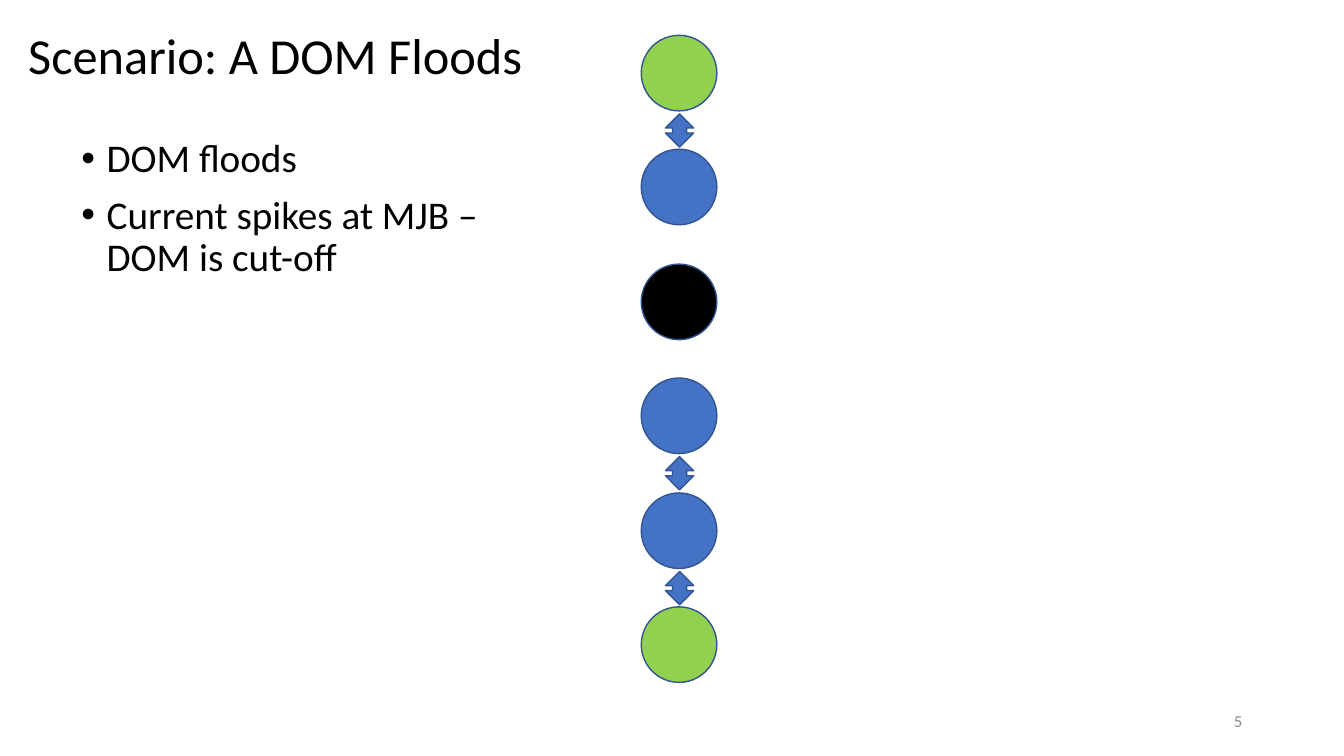
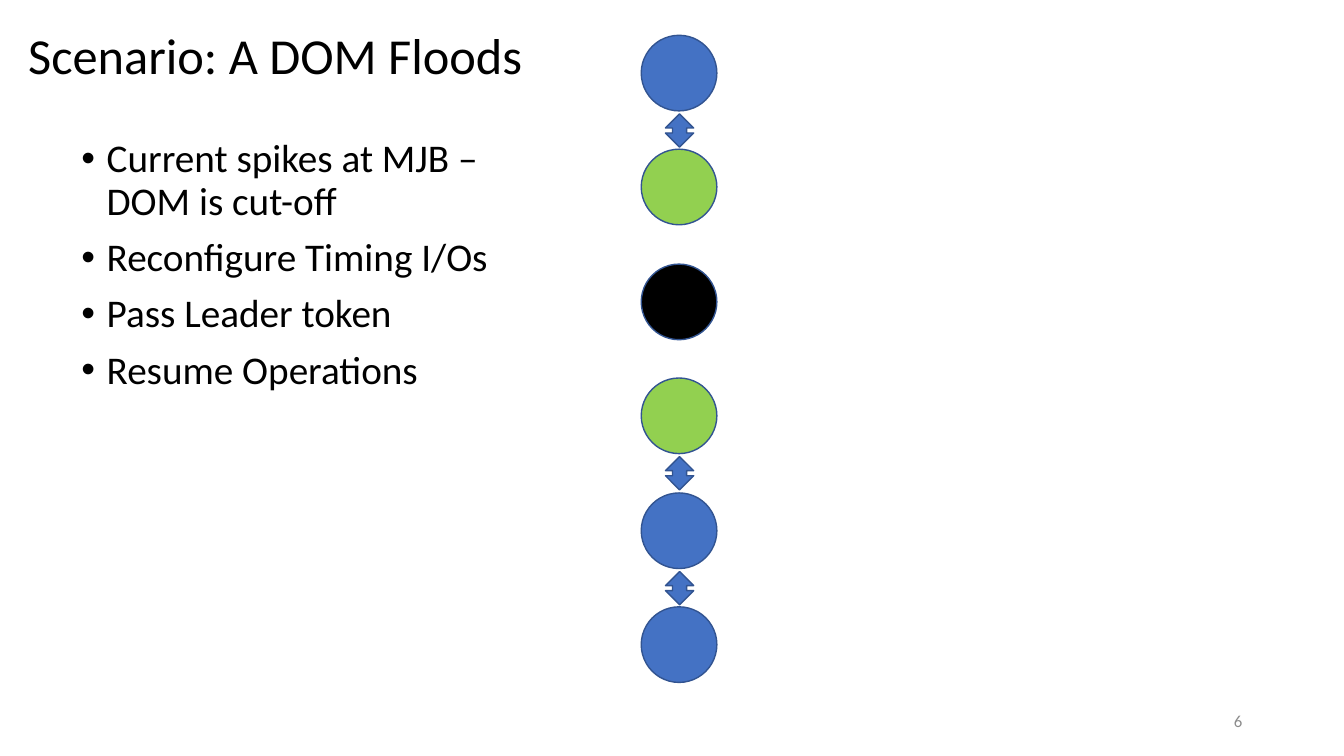
from dataclasses import dataclass
from enum import Enum

from lxml import etree
from pptx import Presentation
from pptx import util as u
from pptx.dml.color import RGBColor
from pptx.enum import shapes, text
from pptx.oxml.ns import qn

EMU_PER_PX = 9144  # 100 px to the inch


def px(length: int) -> u.Emu:
    return u.Emu(length * EMU_PER_PX)


@dataclass(frozen=True)
class Theme:
    font: str = "Calibri"
    ink: str = "000000"
    muted: str = "8C8C8C"
    module: str = "4472C4"
    leader: str = "92D050"
    flooded: str = "000000"
    outline: str = "325491"
    title_size: int = 36
    body_size: int = 28
    number_size: int = 12


THEME = Theme()


class Dom(Enum):
    """State of one module on the string."""
    NORMAL = "normal"
    LEADER = "leader"
    FLOODED = "flooded"


DOM_FILL = {
    Dom.NORMAL: THEME.module,
    Dom.LEADER: THEME.leader,
    Dom.FLOODED: THEME.flooded,
}


@dataclass(frozen=True)
class Box:
    left: int
    top: int
    width: int
    height: int

    def emu(self) -> tuple[u.Emu, u.Emu, u.Emu, u.Emu]:
        return px(self.left), px(self.top), px(self.width), px(self.height)


@dataclass(frozen=True)
class Scenario:
    number: int
    steps: tuple[str, ...]
    doms: tuple[Dom, ...]


TITLE = "Scenario: A DOM Floods"
TITLE_BOX = Box(18, 6, 860, 104)
STEPS_BOX = Box(71, 133, 498, 543)
NUMBER_BOX = Box(942, 695, 300, 40)

DOM_LEFT, DOM_SIZE = 636, 75
FIRST_DOM_TOP, LAST_DOM_TOP = 35, 602
LINK_WIDTH, LINK_HEIGHT = 28, 33
LINK_GAP = 3

SCENARIOS = (
    Scenario(
        5,
        ("DOM floods", "Current spikes at MJB – DOM is cut-off"),
        (Dom.LEADER, Dom.NORMAL, Dom.FLOODED,
         Dom.NORMAL, Dom.NORMAL, Dom.LEADER),
    ),
    Scenario(
        6,
        ("Current spikes at MJB – DOM is cut-off", "Reconfigure Timing I/Os",
         "Pass Leader token", "Resume Operations"),
        (Dom.NORMAL, Dom.LEADER, Dom.FLOODED,
         Dom.LEADER, Dom.NORMAL, Dom.NORMAL),
    ),
)


def set_font(paragraph, size: int, color: str) -> None:
    paragraph.font.name = THEME.font
    paragraph.font.size = u.Pt(size)
    paragraph.font.color.rgb = RGBColor.from_string(color)


def add_bullet(paragraph) -> None:
    properties = paragraph._p.get_or_add_pPr()
    properties.set("marL", str(px(25)))
    properties.set("indent", str(px(-25)))
    bullet_font = etree.SubElement(properties, qn("a:buFont"))
    bullet_font.set("typeface", "Arial")
    etree.SubElement(properties, qn("a:buChar")).set("char", "•")


def set_title(slide) -> None:
    title = slide.shapes.title
    title.left, title.top, title.width, title.height = TITLE_BOX.emu()
    frame = title.text_frame
    frame.text = TITLE
    frame.auto_size = text.MSO_AUTO_SIZE.NONE
    frame.vertical_anchor = text.MSO_ANCHOR.MIDDLE
    heading = frame.paragraphs[0]
    heading.alignment = text.PP_ALIGN.LEFT
    heading.line_spacing = 0.9
    set_font(heading, THEME.title_size, THEME.ink)


def add_steps(slide, steps: tuple[str, ...]) -> None:
    frame = slide.shapes.add_textbox(*STEPS_BOX.emu()).text_frame
    frame.word_wrap = True
    for index, step in enumerate(steps):
        paragraph = frame.add_paragraph() if index else frame.paragraphs[0]
        paragraph.text = step
        add_bullet(paragraph)
        paragraph.line_spacing = 0.9
        if index:
            paragraph.space_before = u.Pt(10)
        set_font(paragraph, THEME.body_size, THEME.ink)


def add_number(slide, number: int) -> None:
    frame = slide.shapes.add_textbox(*NUMBER_BOX.emu()).text_frame
    frame.word_wrap = True
    frame.vertical_anchor = text.MSO_ANCHOR.MIDDLE
    paragraph = frame.paragraphs[0]
    paragraph.text = str(number)
    paragraph.alignment = text.PP_ALIGN.RIGHT
    set_font(paragraph, THEME.number_size, THEME.muted)


def add_outlined(slide, kind: shapes.MSO_SHAPE, box: Box, fill: str) -> None:
    shape = slide.shapes.add_shape(kind, *box.emu())
    shape.shadow.inherit = False
    shape.fill.solid()
    shape.fill.fore_color.rgb = RGBColor.from_string(fill)
    shape.line.color.rgb = RGBColor.from_string(THEME.outline)
    shape.line.width = u.Pt(1)


def add_dom_string(slide, doms: tuple[Dom, ...]) -> None:
    """Draw the column of modules, linking neighbours that both still work."""
    pitch = (LAST_DOM_TOP - FIRST_DOM_TOP) / (len(doms) - 1)
    tops = [round(FIRST_DOM_TOP + index * pitch) for index in range(len(doms))]
    for top, dom in zip(tops, doms):
        add_outlined(slide, shapes.MSO_SHAPE.OVAL,
                     Box(DOM_LEFT, top, DOM_SIZE, DOM_SIZE), DOM_FILL[dom])

    link_left = round(DOM_LEFT + (DOM_SIZE - LINK_WIDTH) / 2)
    for top, pair in zip(tops, zip(doms, doms[1:])):
        if Dom.FLOODED not in pair:
            link = Box(link_left, top + DOM_SIZE + LINK_GAP,
                       LINK_WIDTH, LINK_HEIGHT)
            add_outlined(slide, shapes.MSO_SHAPE.UP_DOWN_ARROW, link,
                         THEME.module)


def main() -> None:
    deck = Presentation()
    deck.slide_width, deck.slide_height = px(1333), px(750)
    title_only = deck.slide_layouts[5]
    for scenario in SCENARIOS:
        slide = deck.slides.add_slide(title_only)
        set_title(slide)
        add_steps(slide, scenario.steps)
        add_number(slide, scenario.number)
        add_dom_string(slide, scenario.doms)
    deck.save("out.pptx")


if __name__ == "__main__":
    main()
